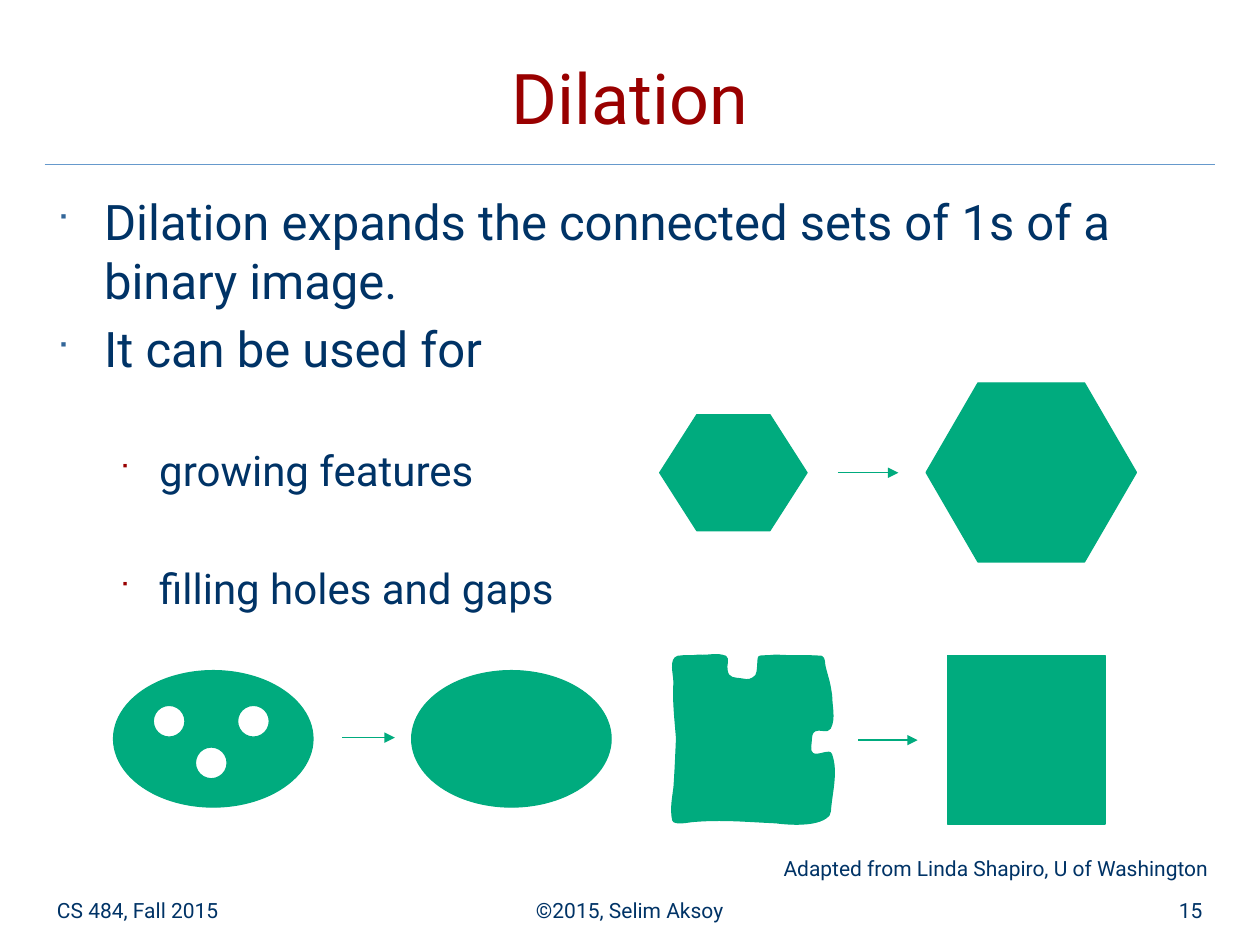
from dataclasses import dataclass

import lxml.etree
import pptx
import pptx.dml.color
import pptx.enum.shapes
import pptx.enum.text
import pptx.oxml.ns
import pptx.util

Cm = pptx.util.Cm
Pt = pptx.util.Pt
RGBColor = pptx.dml.color.RGBColor
SHAPE = pptx.enum.shapes.MSO_SHAPE
ALIGN = pptx.enum.text.PP_ALIGN
ANCHOR = pptx.enum.text.MSO_ANCHOR
qn = pptx.oxml.ns.qn

NAVY = RGBColor(0x00, 0x33, 0x66)
RED = RGBColor(0x99, 0x00, 0x00)
STEEL = RGBColor(0x33, 0x66, 0x99)
SKY = RGBColor(0x66, 0x99, 0xCC)
GREEN = RGBColor(0x00, 0xAB, 0x7E)
WHITE = RGBColor(0xFF, 0xFF, 0xFF)
FONT = "Roboto"
BULLET_FONT = "Wingdings"


@dataclass(frozen=True)
class Box:
    x: float
    y: float
    w: float
    h: float

    def lengths(self) -> tuple:
        return Cm(self.x), Cm(self.y), Cm(self.w), Cm(self.h)


@dataclass(frozen=True)
class Figure:
    kind: int
    box: Box
    fill: RGBColor = GREEN
    adj: float | None = None


@dataclass(frozen=True)
class Line:
    x1: float
    x2: float
    y: float
    color: RGBColor = GREEN
    arrow: bool = True


@dataclass(frozen=True)
class Level:
    size: float
    left: float
    hang: float
    color: RGBColor
    percent: int


@dataclass(frozen=True)
class Item:
    text: str
    level: Level
    before: float


@dataclass(frozen=True)
class Label:
    text: str
    box: Box
    align: int
    anchor: int = ANCHOR.BOTTOM


MAIN = Level(28, 0.95, 0.95, STEEL, 60)
SUB = Level(24, 2.06, 0.79, RED, 55)
ITEMS = [
    Item("Dilation expands the connected sets of 1s of a binary image.", MAIN, 0),
    Item("It can be used for", MAIN, 5.6),
    Item("growing features", SUB, 38),
    Item("filling holes and gaps", SUB, 38.8),
]
LABELS = [
    Label("CS 484, Fall 2015", Box(0.9, 17.83, 5.28, 0.89), ALIGN.LEFT),
    Label("©2015, Selim Aksoy", Box(8.67, 17.83, 8.05, 0.89), ALIGN.CENTER),
    Label("15", Box(19.21, 17.83, 5.28, 0.89), ALIGN.RIGHT),
    Label("Adapted from Linda Shapiro, U of Washington",
          Box(15.09, 17.12, 9.52, 0.76), ALIGN.RIGHT, ANCHOR.TOP),
]
FIGURES = [
    Figure(SHAPE.HEXAGON, Box(13.3, 8.36, 2.97, 2.34), adj=0.32),
    Figure(SHAPE.HEXAGON, Box(18.67, 7.72, 4.24, 3.61), adj=0.29),
    Figure(SHAPE.RECTANGLE, Box(19.1, 13.22, 3.18, 3.39)),
    *(Figure(SHAPE.OVAL, Box(x, 13.52, 4.02, 2.75)) for x in (2.29, 8.3)),
    *(Figure(SHAPE.OVAL, Box(x, y, 0.64, 0.64), WHITE)
      for x, y in ((3.09, 14.22), (4.79, 14.22), (3.94, 15.06))),
]
LINES = [
    Line(0.9, 24.5, 3.32, SKY, False),
    Line(16.89, 18.11, 9.53),
    Line(17.3, 18.5, 14.92),
    Line(6.9, 7.96, 14.87),
]
OUTLINE_UNIT = Cm(0.0254)
OUTLINE_START = (555, 520)
OUTLINE_CURVES = [
    (561, 521, 569, 518, 576, 521), (579, 523, 576, 528, 577, 532),
    (578, 539, 583, 538, 589, 539), (594, 540, 596, 540, 600, 536),
    (600, 535, 601, 534, 601, 533), (603, 517, 598, 522, 616, 520),
    (628, 521, 640, 520, 652, 521), (655, 522, 654, 527, 655, 530),
    (656, 535, 656, 535, 658, 541), (659, 545, 660, 552, 660, 552),
    (660, 561, 663, 570, 659, 578), (657, 582, 650, 578, 647, 580),
    (644, 581, 644, 586, 644, 586), (644, 590, 642, 596, 645, 598),
    (649, 601, 659, 594, 660, 599), (665, 613, 660, 629, 659, 644),
    (659, 645, 659, 646, 658, 647), (649, 658, 616, 653, 616, 653),
    (593, 652, 573, 650, 550, 652), (548, 652, 535, 655, 534, 651),
    (532, 642, 534, 633, 535, 625), (536, 612, 537, 586, 537, 586),
    (536, 572, 534, 557, 535, 542), (535, 535, 531, 523, 538, 521),
    (544, 520, 549, 521, 555, 520),
]


def write(p, text: str, *, size: float = 12, color: RGBColor = NAVY,
          align: int = ALIGN.LEFT, before: float = 0) -> None:
    p.alignment = align
    p.space_before = Pt(before)
    r = p.add_run()
    r.text = text
    r.font.name = FONT
    r.font.size = Pt(size)
    r.font.color.rgb = color


def add_text_box(s, box: Box, anchor: int):
    tf = s.shapes.add_textbox(*box.lengths()).text_frame
    tf.word_wrap = True
    tf.vertical_anchor = anchor
    return tf


def add_bullet(p, level: Level) -> None:
    pPr = p._p.get_or_add_pPr()
    pPr.set("marL", str(Cm(level.left)))
    pPr.set("indent", str(-Cm(level.hang)))
    clr = lxml.etree.SubElement(pPr, qn("a:buClr"))
    lxml.etree.SubElement(clr, qn("a:srgbClr"), val=str(level.color))
    lxml.etree.SubElement(pPr, qn("a:buSzPct"), val=str(level.percent * 1000))
    lxml.etree.SubElement(pPr, qn("a:buFont"), typeface=BULLET_FONT)
    lxml.etree.SubElement(pPr, qn("a:buChar"), char="■")


def add_items(s, box: Box, items: list[Item]) -> None:
    tf = add_text_box(s, box, ANCHOR.TOP)
    for i, item in enumerate(items):
        p = tf.add_paragraph() if i else tf.paragraphs[0]
        p.level = 1 if item.level is SUB else 0
        write(p, item.text, size=item.level.size, before=item.before)
        add_bullet(p, item.level)


def paint(sp, fill: RGBColor) -> None:
    sp.shadow.inherit = False
    sp.fill.solid()
    sp.fill.fore_color.rgb = fill
    sp.line.color.rgb = GREEN
    sp.line.width = Pt(0.75)


def add_figure(s, figure: Figure) -> None:
    sp = s.shapes.add_shape(figure.kind, *figure.box.lengths())
    if figure.adj is not None:
        sp.adjustments[0] = figure.adj
    paint(sp, figure.fill)


def add_line(s, line: Line) -> None:
    sp = s.shapes.add_connector(pptx.enum.shapes.MSO_CONNECTOR.STRAIGHT,
                                Cm(line.x1), Cm(line.y), Cm(line.x2), Cm(line.y))
    sp.line.color.rgb = line.color
    sp.line.width = Pt(0.75)
    if line.arrow:
        lxml.etree.SubElement(sp.line._get_or_add_ln(), qn("a:tailEnd"), type="triangle")
    lxml.etree.SubElement(sp.element.spPr, qn("a:effectLst"))


def add_ragged_square(s) -> None:
    ends = [curve[4:] for curve in OUTLINE_CURVES]
    left, top = (min(axis) for axis in zip(*ends))
    builder = s.shapes.build_freeform(*OUTLINE_START, scale=float(OUTLINE_UNIT))
    builder.add_line_segments(ends, close=True)
    sp = builder.convert_to_shape()
    segments = list(sp.element.iter(qn("a:lnTo")))
    for segment, curve in zip(segments, OUTLINE_CURVES):
        bezier = lxml.etree.Element(qn("a:cubicBezTo"))
        for x, y in zip(curve[::2], curve[1::2]):
            lxml.etree.SubElement(bezier, qn("a:pt"), x=str(x - left), y=str(y - top))
        segment.getparent().replace(segment, bezier)
    paint(sp, GREEN)


def main() -> None:
    prs = pptx.Presentation()
    prs.slide_width, prs.slide_height = Cm(25.4), Cm(19.05)
    s = prs.slides.add_slide(prs.slide_layouts[5])
    title = s.shapes.title
    title.left, title.top, title.width, title.height = Box(0.89, 0.53, 23.6, 2.39).lengths()
    title.text_frame.vertical_anchor = ANCHOR.BOTTOM
    write(title.text_frame.paragraphs[0], "Dilation", size=40, color=RED, align=ALIGN.CENTER)
    add_items(s, Box(0.9, 3.73, 23.6, 13.79), ITEMS)
    for line in LINES:
        add_line(s, line)
    for figure in FIGURES:
        add_figure(s, figure)
    add_ragged_square(s)
    for label in LABELS:
        tf = add_text_box(s, label.box, label.anchor)
        write(tf.paragraphs[0], label.text, align=label.align)
    prs.save("out.pptx")


if __name__ == "__main__":
    main()
